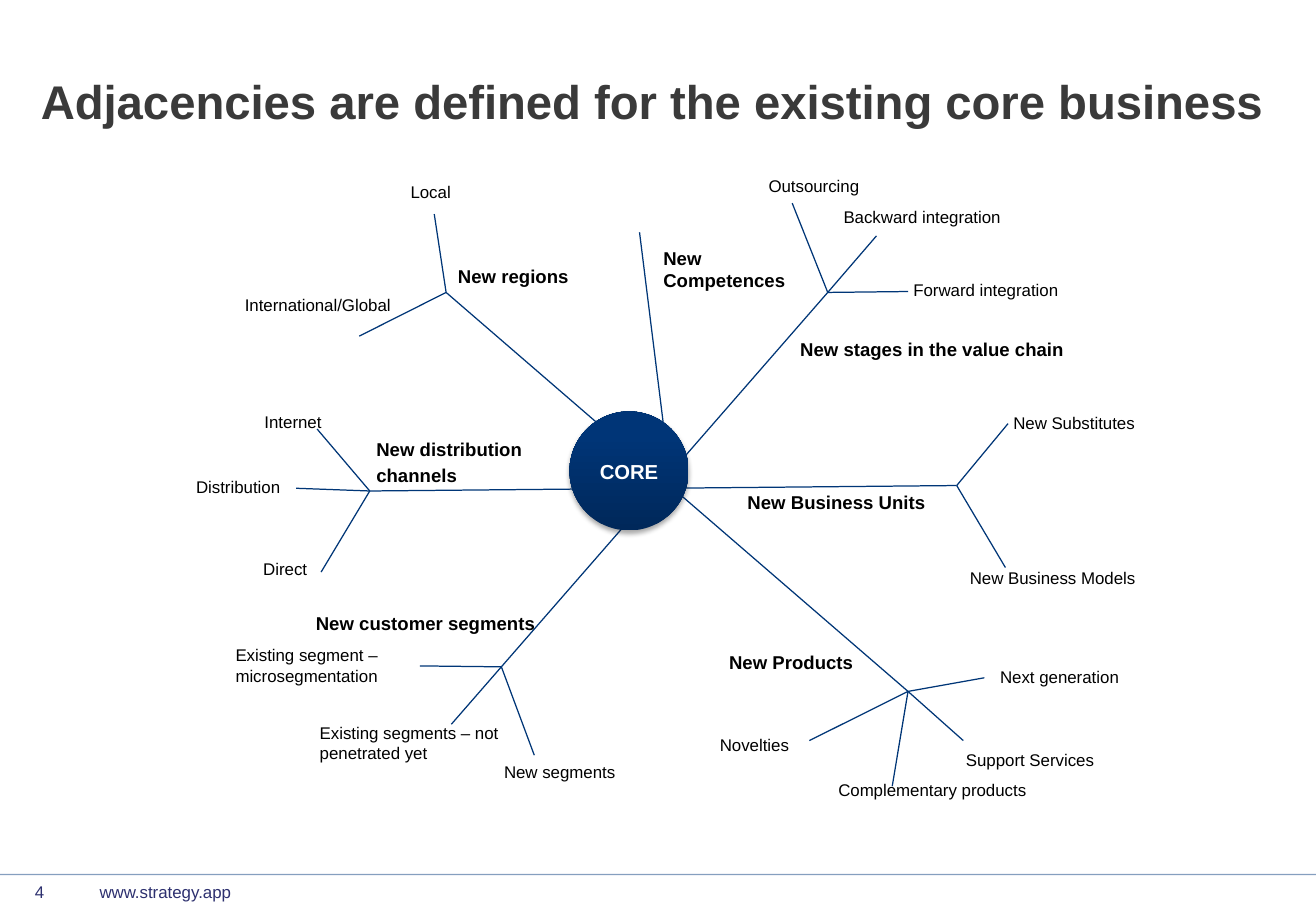
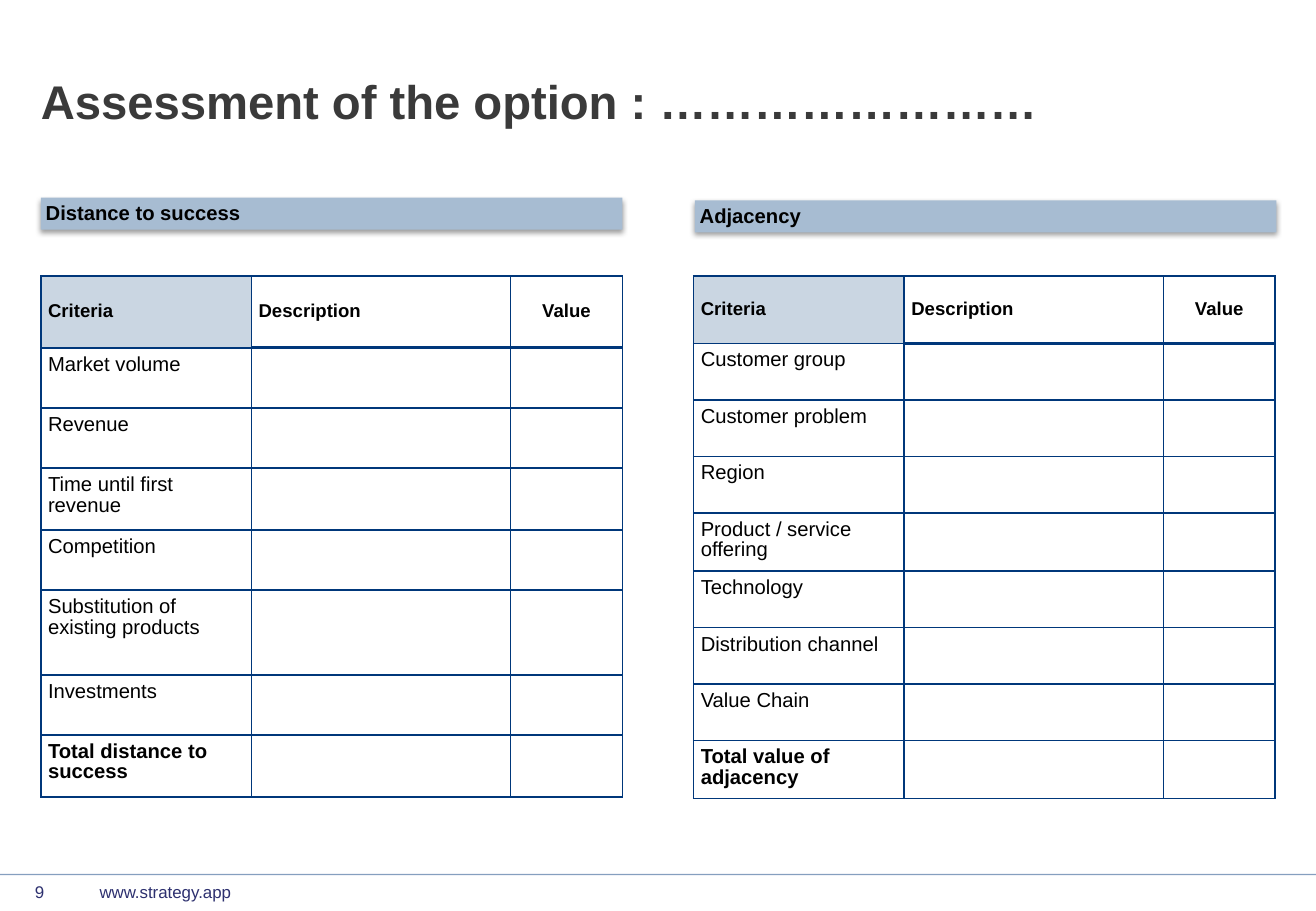
from collections import namedtuple

from lxml import etree
from pptx import Presentation
from pptx.dml.color import RGBColor
from pptx.enum.shapes import MSO_CONNECTOR, MSO_SHAPE
from pptx.enum.text import MSO_ANCHOR, PP_ALIGN
from pptx.oxml.ns import qn
from pptx.util import Inches, Pt

STRAIGHT = MSO_CONNECTOR.STRAIGHT
OVAL, RECTANGLE = MSO_SHAPE.OVAL, MSO_SHAPE.RECTANGLE
TOP, MIDDLE, BOTTOM = MSO_ANCHOR.TOP, MSO_ANCHOR.MIDDLE, MSO_ANCHOR.BOTTOM
LEFT, CENTER = PP_ALIGN.LEFT, PP_ALIGN.CENTER

WIDTH, HEIGHT = Inches(10.83), Inches(7.5)
COLUMN, ROW = WIDTH / 100, HEIGHT / 100
FONT = "Arial"
BLACK, WHITE = "000000", "FFFFFF"
TITLE_GREY, FOOTER_BLUE = "3A3A3A", "2D306F"
LINE_BLUE, TABLE_BLUE = "003677", "00377A"
CORE_DARK, CORE_LIGHT = "00285A", "003577"
BAND_BLUE, HEADER_BLUE = "A7BCD2", "CAD6E2"

Label = namedtuple("Label", "text x y width lines", defaults=(22, 1))
Branch = namedtuple("Branch", "heading hub twigs")

CORE_CENTER = (47.8, 51.7)
CORE_DIAMETER = 9.05 * COLUMN
REGIONS, PRODUCTS = (33.9, 32.1), (69, 75.9)
CHANNELS, UNITS = (28.1, 53.9), (72.7, 53.3)
SEGMENTS, STAGES = (38.1, 73.2), (62.9, 32.1)
COMPETENCES = (48.6, 25.5)

TRUNKS = [
    ((50.5, 47.6), COMPETENCES),
    (REGIONS, PRODUCTS),
    (CHANNELS, UNITS),
    (SEGMENTS, STAGES),
]

BRANCHES = [
    Branch(Label("New regions", 34.8, 29.1), REGIONS, [
        ((33, 23.5), Label("Local", 31.2, 19.9)),
        ((27.3, 36.9), Label("International/Global", 18.6, 32.4)),
    ]),
    Branch(Label("New Competences", 50.4, 27.1, 9.5, 2), COMPETENCES, []),
    Branch(Label("New stages in the value chain", 60.8, 37.1), STAGES, [
        ((60.2, 22.3), Label("Outsourcing", 58.4, 19.3)),
        ((66.6, 25.9), Label("Backward integration", 64.1, 22.7)),
        ((69, 32), Label("Forward integration", 69.4, 30.7)),
    ]),
    Branch(Label("New Business Units", 56.8, 53.9), UNITS, [
        ((76.6, 46.5), Label("New Substitutes", 77, 45.3)),
        ((76.4, 62.3), Label("New Business Models", 73.7, 62.3)),
    ]),
    Branch(Label("New Products", 55.4, 71.5), PRODUCTS, [
        ((74.8, 74.4), Label("Next generation", 76, 73.2)),
        ((73.2, 81.3), Label("Support Services", 73.4, 82.3)),
        ((67.8, 86.3), Label("Complementary products", 63.7, 85.6)),
        ((61.5, 81.3), Label("Novelties", 54.7, 80.7)),
    ]),
    Branch(Label("New customer segments", 24, 67.2), SEGMENTS, [
        ((31.9, 73.1), Label("Existing segment – microsegmentation", 17.9, 70.8, 14.6, 2)),
        ((34.3, 79.5), Label("Existing segments – not penetrated yet", 24.3, 79.3, 17, 2)),
        ((40.6, 82.9), Label("New segments", 38.3, 83.6)),
    ]),
    Branch(Label("New distribution\nchannels", 28.6, 48.1, 15, 2), CHANNELS, [
        ((24.1, 47.1), Label("Internet", 20.1, 45.2)),
        ((22.5, 53.6), Label("Distribution", 14.9, 52.3)),
        ((24.4, 62.8), Label("Direct", 20, 61.3)),
    ]),
]

TABLE_COLUMNS = [16, 19.7, 8.5]
TABLE_TOP = 30.3
HEADINGS = ["Criteria", "Description", "Value"]
DISTANCE_ROWS = [
    ("Market volume", 6.6),
    ("Revenue", 6.6),
    ("Time until first revenue", 6.8),
    ("Competition", 6.6),
    ("Substitution of existing products", 9.3),
    ("Investments", 6.6),
    ("Total distance to success", 6.8),
]
ADJACENCY_ROWS = [
    ("Customer group", 6.2),
    ("Customer problem", 6.2),
    ("Region", 6.2),
    ("Product / service offering", 6.3),
    ("Technology", 6.2),
    ("Distribution channel", 6.2),
    ("Value Chain", 6.2),
    ("Total value of adjacency", 6.3),
]


def color(value):
    return RGBColor.from_string(value)


def across(share):
    return round(share * COLUMN)


def down(share):
    return round(share * ROW)


def add_node(parent, tag, **attributes):
    return etree.SubElement(parent, qn(tag), attributes)


def write(frame, text, size, ink=BLACK, bold=False, align=LEFT, spacing=None):
    for index, line in enumerate(text.split("\n")):
        para = frame.paragraphs[0] if index == 0 else frame.add_paragraph()
        para.text = line
        para.alignment = align
        if index:
            para.space_before = Pt(2)
        if spacing:
            para.line_spacing = spacing
        font = para.font
        font.name, font.size, font.bold = FONT, Pt(size), bold
        font.color.rgb = color(ink)


def set_frame(frame, inset=0, anchor=TOP):
    frame.word_wrap = True
    frame.vertical_anchor = anchor
    frame.margin_left = frame.margin_right = across(inset)
    frame.margin_top = frame.margin_bottom = across(inset)


def add_text(page, text, x, y, width, height, size, inset=0, **style):
    box = page.shapes.add_textbox(across(x), down(y), across(width), down(height))
    set_frame(box.text_frame, inset)
    write(box.text_frame, text, size, **style)


def add_line(page, start, end, ink=LINE_BLUE, opacity=100):
    line = page.shapes.add_connector(
        STRAIGHT, across(start[0]), down(start[1]), across(end[0]), down(end[1]))
    line.line.width = Pt(0.75)
    line.line.color.rgb = color(ink)
    if opacity < 100:
        for paint in line.line._ln.iter(qn("a:srgbClr")):
            add_node(paint, "a:alpha", val=str(opacity * 1000))
    add_node(line._element.spPr, "a:effectLst")


def cast_shadow(shape, opacity, distance):
    shape.shadow.inherit = False
    effects = shape._element.spPr.find(qn("a:effectLst"))
    shadow = add_node(effects, "a:outerShdw", blurRad=str(Pt(3)), dist=str(Pt(distance)),
                      dir="5400000", algn="t", rotWithShape="0")
    paint = add_node(shadow, "a:srgbClr", val=BLACK)
    add_node(paint, "a:alpha", val=str(opacity * 1000))


def add_page(deck, title, number):
    page = deck.slides.add_slide(deck.slide_layouts[6])
    add_text(page, title, 3.1, 8.7, 93.9, 7.3, 28,
             ink=TITLE_GREY, bold=True, spacing=0.88)
    add_line(page, (0, 96), (100, 96), TABLE_BLUE, 47)
    for text, x, width in [(number, 2.2, 4), ("www.strategy.app", 7.1, 23)]:
        add_text(page, text, x, 96.1, width, 3.4, 10, inset=0.46, ink=FOOTER_BLUE)
    return page


def add_label(page, label, size, bold=False):
    add_text(page, label.text, label.x, label.y, label.width, 2.5 * label.lines,
             size, bold=bold)


def add_core(page):
    x, y = CORE_CENTER
    side = round(CORE_DIAMETER)
    core = page.shapes.add_shape(
        OVAL, across(x) - side // 2, down(y) - side // 2, side, side)
    core.fill.gradient()
    core.fill.gradient_angle = 90
    stops = core.fill.gradient_stops
    for stop, paint, position in zip(stops, (CORE_DARK, CORE_LIGHT), (0, 0.8)):
        stop.color.rgb = color(paint)
        stop.position = position
    core.line.fill.background()
    cast_shadow(core, 35, 1.8)
    set_frame(core.text_frame, anchor=MIDDLE)
    write(core.text_frame, "CORE", 12, ink=WHITE, bold=True, align=CENTER)


def add_band(page, text, x, y):
    band = page.shapes.add_shape(
        RECTANGLE, across(x), down(y), across(sum(TABLE_COLUMNS)), down(3.5))
    band.fill.solid()
    band.fill.fore_color.rgb = color(BAND_BLUE)
    band.line.fill.background()
    cast_shadow(band, 38, 1.6)
    set_frame(band.text_frame, inset=0.37, anchor=BOTTOM)
    write(band.text_frame, text, 12, bold=True, spacing=0.9)


def set_borders(cell, top, bottom):
    properties = cell._tc.get_or_add_tcPr()
    for side, weight in [("L", 1), ("R", 1), ("T", top), ("B", bottom)]:
        border = add_node(properties, "a:ln" + side, w=str(Pt(weight)))
        paint = add_node(border, "a:solidFill")
        add_node(paint, "a:srgbClr", val=TABLE_BLUE)


def add_criteria_table(page, x, header_height, criteria):
    rows = [HEADINGS] + [[name, "", ""] for name, _ in criteria]
    heights = [header_height] + [height for _, height in criteria]
    table = page.shapes.add_table(
        len(rows), len(HEADINGS), across(x), down(TABLE_TOP),
        across(sum(TABLE_COLUMNS)), down(sum(heights))).table
    table.first_row = table.horz_banding = False
    for column, width in zip(table.columns, TABLE_COLUMNS):
        column.width = across(width)
    for row, height in zip(table.rows, heights):
        row.height = down(height)
    last = len(rows) - 1
    for row_index, texts in enumerate(rows):
        header = row_index == 0
        for column_index, text in enumerate(texts):
            cell = table.cell(row_index, column_index)
            header_rule = 2 if column_index else 1
            set_borders(cell, header_rule if row_index == 1 else 1,
                        header_rule if header else 1)
            if header and column_index == 0:
                cell.fill.solid()
                cell.fill.fore_color.rgb = color(HEADER_BLUE)
            else:
                cell.fill.background()
            cell.margin_left = cell.margin_right = across(0.55)
            cell.margin_top = cell.margin_bottom = across(0.55)
            cell.vertical_anchor = MIDDLE if header else TOP
            write(cell.text_frame, text, 11 if header else 12,
                  bold=row_index in (0, last),
                  align=CENTER if column_index == 2 else LEFT, spacing=0.9)


def build_adjacencies(deck):
    page = add_page(deck, "Adjacencies are defined for the existing core business", "4")
    for start, end in TRUNKS:
        add_line(page, start, end)
    add_core(page)
    for branch in BRANCHES:
        add_label(page, branch.heading, 11, bold=True)
        for tip, label in branch.twigs:
            add_line(page, branch.hub, tip)
            add_label(page, label, 10)


def build_assessment(deck):
    page = add_page(deck, "Assessment of the option : ……………………", "9")
    add_band(page, "Distance to success", 3.1, 21.7)
    add_band(page, "Adjacency", 52.8, 22)
    add_criteria_table(page, 3.1, 7.9, DISTANCE_ROWS)
    add_criteria_table(page, 52.7, 7.4, ADJACENCY_ROWS)


def main():
    deck = Presentation()
    deck.slide_width, deck.slide_height = WIDTH, HEIGHT
    build_adjacencies(deck)
    build_assessment(deck)
    deck.save("out.pptx")


if __name__ == "__main__":
    main()
